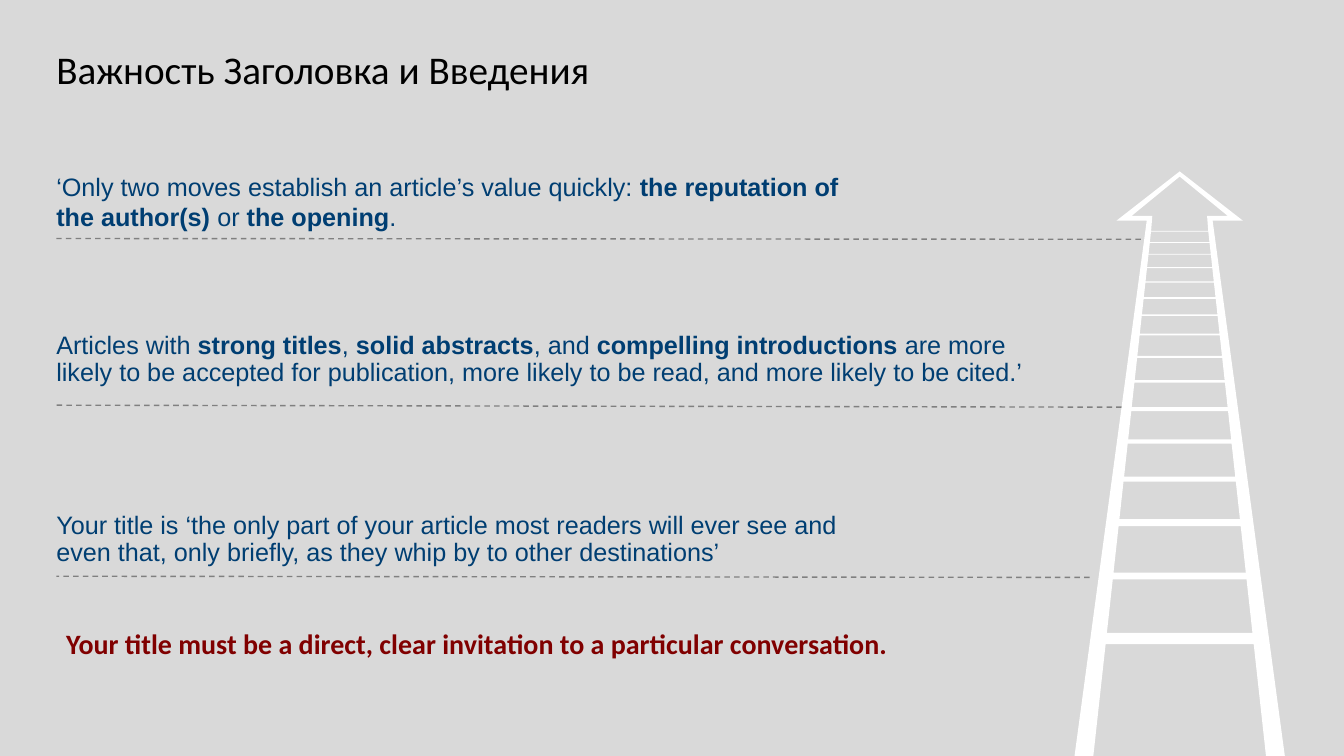
from pptx import Presentation
from pptx.dml.color import RGBColor
from pptx.enum.dml import MSO_LINE_DASH_STYLE as Dash
from pptx.enum.shapes import MSO_CONNECTOR as Connector
from pptx.enum.text import MSO_ANCHOR as Anchor
from pptx.oxml.ns import qn
from pptx.util import Cm, Pt
from lxml.etree import SubElement

COLORS = {"page": "D9D9D9", "title": "000000", "quote": "003E72",
          "rule": "808080", "advice": "800000", "ladder": "FFFFFF"}


class SlideBuilder:
    def __init__(self, deck):
        self.page = deck.slides.add_slide(deck.slide_layouts[6])
        fill = self.page.background.fill
        fill.solid()
        fill.fore_color.rgb = self.color("page")

    def color(self, name):
        return RGBColor.from_string(COLORS[name])

    def text(self, area, spans, font, size, color, anchor=Anchor.TOP,
             insets=(0, 0, 0, 0), spacing=1.0):
        """Add one paragraph from (text, bold) spans."""
        box = self.page.shapes.add_textbox(*map(Cm, area))
        frame = box.text_frame
        frame.word_wrap = True
        frame.vertical_anchor = anchor
        (frame.margin_left, frame.margin_top,
         frame.margin_right, frame.margin_bottom) = map(Cm, insets)
        para = frame.paragraphs[0]
        para.line_spacing = spacing
        for words, bold in spans:
            span = para.add_run()
            span.text = words
            span.font.name = font
            span.font.size = Pt(size)
            span.font.bold = bold
            span.font.color.rgb = self.color(color)

    def dashed_rule(self, start, end):
        rule = self.page.shapes.add_connector(
            Connector.STRAIGHT, *map(Cm, start + end))
        rule.line.color.rgb = self.color("rule")
        rule.line.width = Pt(1)
        rule.line.dash_style = Dash.DASH
        SubElement(rule._element.spPr, qn("a:effectLst"))

    def symmetric_shape(self, center, halves, color):
        """Mirror each right half about the center; later ones are holes."""
        builder = None
        for half in halves:
            outline = [(center + x, y) for x, y in half]
            outline += [(center - x, y) for x, y in reversed(half)]
            points = [(Cm(x), Cm(y)) for x, y in outline]
            if builder is None:
                builder = self.page.shapes.build_freeform(*points[0])
            else:
                builder.move_to(*points[0])
            builder.add_line_segments(points[1:], close=True)
        shape = builder.convert_to_shape()
        shape.shadow.inherit = False
        shape.fill.solid()
        shape.fill.fore_color.rgb = self.color(color)
        shape.line.fill.background()


LEFT = 1.42
QUOTE_INSETS = (0, 0.13, 0.25, 0.2)

# Box area, line spacing, spans, rule start and rule end
QUOTES = [
    ((LEFT, 3.58, 20.09, 2.46), 1.0,
     [("‘Only two moves establish an article’s value quickly: ", False),
      ("the reputation of the author(s) ", True), ("or ", False),
      ("the opening", True), (".", False)],
     (28.75, 6.03), (LEFT, 6.01)),
    ((LEFT, 6.78, 24.87, 3.18), 0.9,
     [("Articles with ", False), ("strong titles", True), (", ", False),
      ("solid abstracts", True), (", and ", False),
      ("compelling introductions ", True),
      ("are more likely to be accepted for publication, more likely to be "
       "read, and more likely to be cited.’", False)],
     (28.27, 10.26), (LEFT, 10.21)),
    ((LEFT, 11.3, 21.06, 3.18), 0.9,
     [("Your title is ‘the only part of your article most readers will ever "
       "see and even that, only briefly, as they whip by to other "
       "destinations’", False)],
     (27.46, 14.55), (LEFT, 14.52)),
]

# Top and bottom of each gap between rungs
RUNG_GAPS = [(5.84, 6.1), (6.12, 6.4), (6.42, 6.73), (6.76, 7.09),
             (7.12, 7.49), (7.53, 7.92), (7.96, 8.41), (8.45, 8.97),
             (9.02, 9.58), (9.64, 10.26), (10.36, 11.07), (11.18, 12.01),
             (12.14, 13.08), (13.26, 14.43), (14.6, 15.95)]


def inner_edge(y):
    """Point on the inner side of the right rail."""
    return 0.72 + 0.11 * (y - 5.82), y


def main():
    deck = Presentation()
    deck.slide_width, deck.slide_height = Cm(33.87), Cm(19.05)
    slide = SlideBuilder(deck)

    # Title
    slide.text((LEFT, 1.14, 30.94, 2.97),
               [("Важность Заголовка и Введения", False)],
               "Calibri", 28, "title")

    # Quotes with their rules
    for area, spacing, spans, start, end in QUOTES:
        slide.dashed_rule(start, end)
        slide.text(area, spans, "Arial", 18, "quote", Anchor.BOTTOM,
                   QUOTE_INSETS, spacing)

    # Ladder arrow
    outline = [(0, 4.32), (1.59, 5.56), (0.83, 5.56), (2.65, 19.05),
               inner_edge(19.05), inner_edge(16.23)]
    head = [(0, 4.45), (1.21, 5.44), (0.69, 5.44), inner_edge(5.82)]
    gaps = [[inner_edge(top), inner_edge(bottom)] for top, bottom in RUNG_GAPS]
    slide.symmetric_shape(29.73, [outline, head] + gaps, "ladder")

    # Closing advice
    slide.text((LEFT, 15.65, 25.55, 1.93),
               [("Your title must be a direct, clear invitation to a "
                 "particular conversation.", True)],
               "Calibri", 20, "advice", insets=(0.25, 0.13, 0.25, 0.13))

    deck.save("out.pptx")


if __name__ == "__main__":
    main()
